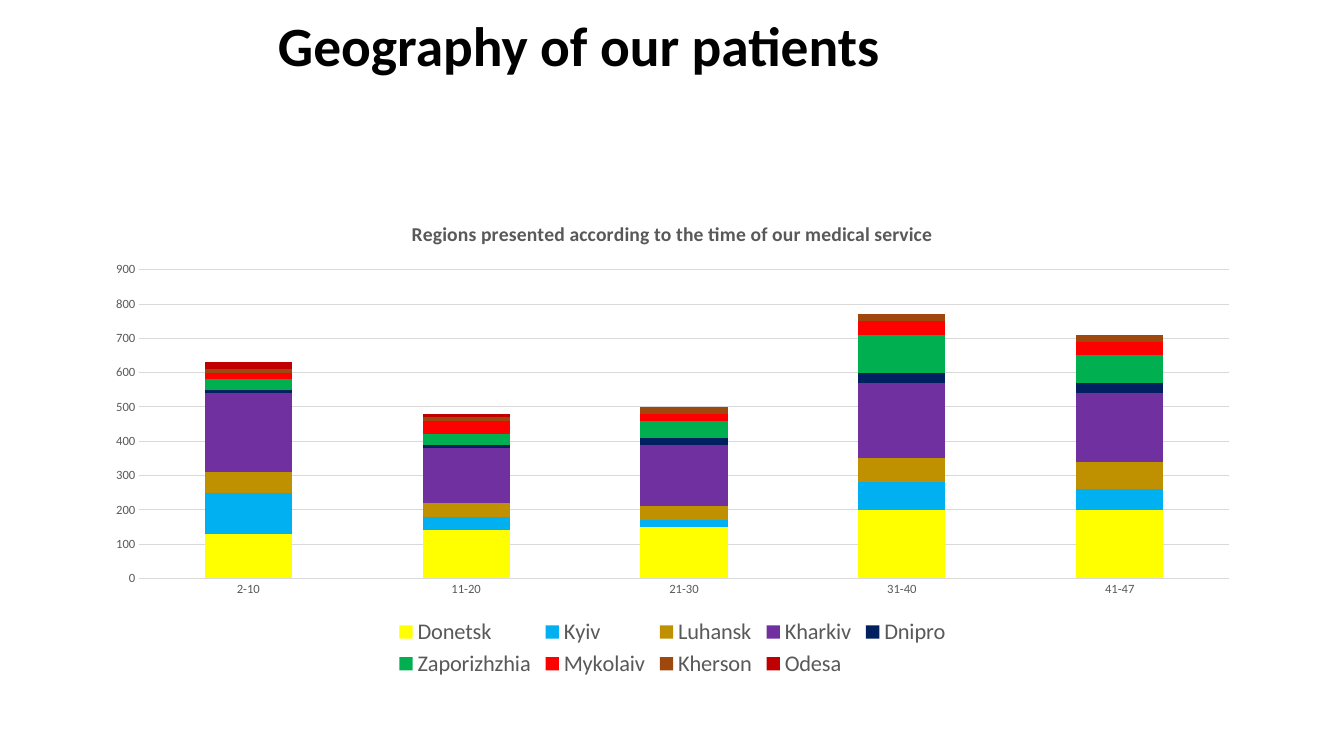
from pptx import Presentation
from pptx.chart.data import CategoryChartData
from pptx.dml.color import RGBColor
from pptx.enum.chart import XL_CHART_TYPE, XL_LEGEND_POSITION, XL_TICK_MARK
from pptx.enum.text import MSO_ANCHOR, MSO_AUTO_SIZE, PP_ALIGN
from pptx.util import Emu, Pt

PX = 914400 / 100.8
FACE = "Calibri"
BLACK = RGBColor(0x00, 0x00, 0x00)
GRAY = RGBColor(0x59, 0x59, 0x59)
RULE = RGBColor(0xD9, 0xD9, 0xD9)

SPANS = ["2-10", "11-20", "21-30", "31-40", "41-47"]
# Region, bar colour, patients per span
REGIONS = [
    ("Donetsk", RGBColor(0xFF, 0xFF, 0x00), (130, 140, 150, 200, 200)),
    ("Kyiv", RGBColor(0x00, 0xB0, 0xF0), (120, 40, 20, 80, 60)),
    ("Luhansk", RGBColor(0xBF, 0x90, 0x00), (60, 40, 40, 70, 80)),
    ("Kharkiv", RGBColor(0x70, 0x30, 0xA0), (230, 160, 180, 220, 200)),
    ("Dnipro", RGBColor(0x00, 0x20, 0x60), (10, 10, 20, 30, 30)),
    ("Zaporizhzhia", RGBColor(0x00, 0xB0, 0x50), (30, 30, 50, 110, 80)),
    ("Mykolaiv", RGBColor(0xFF, 0x00, 0x00), (20, 40, 20, 40, 40)),
    ("Kherson", RGBColor(0x9E, 0x48, 0x0E), (10, 10, 20, 20, 20)),
    ("Odesa", RGBColor(0xC0, 0x00, 0x00), (20, 10, 0, 0, 0)),
]


def px(count):
    return Emu(round(count * PX))


def assign(target, **values):
    for name, value in values.items():
        setattr(target, name, value)


def style(font, size, color, bold=False):
    assign(font, name=FACE, size=Pt(size), bold=bold)
    font.color.rgb = color


def draw_rule(line):
    line.color.rgb = RULE
    line.width = Pt(0.75)


def set_title(slide, text):
    title = slide.shapes.title
    assign(title, left=px(93), top=px(19), width=px(1159), height=px(146))
    frame = title.text_frame
    assign(frame, text=text, word_wrap=True, auto_size=MSO_AUTO_SIZE.NONE,
           vertical_anchor=MSO_ANCHOR.TOP, margin_left=px(185), margin_top=0)
    para = frame.paragraphs[0]
    assign(para, alignment=PP_ALIGN.LEFT, line_spacing=0.9)
    style(para.runs[0].font, 39.6, BLACK, True)


def set_axes(chart):
    for axis in (chart.category_axis, chart.value_axis):
        assign(axis, major_tick_mark=XL_TICK_MARK.NONE,
               minor_tick_mark=XL_TICK_MARK.NONE)
        style(axis.tick_labels.font, 9, GRAY)
    draw_rule(chart.category_axis.format.line)
    scale = chart.value_axis
    assign(scale, minimum_scale=0, maximum_scale=900, major_unit=100)
    scale.format.line.fill.background()
    draw_rule(scale.major_gridlines.format.line)


def add_bars(slide, heading):
    data = CategoryChartData()
    data.categories = SPANS
    for name, _, counts in REGIONS:
        data.add_series(name, counts)
    chart = slide.shapes.add_chart(
        XL_CHART_TYPE.COLUMN_STACKED,
        px(93), px(202), px(1159), px(480), data).chart
    style(chart.font, 10, BLACK)

    # Heading and legend
    chart.has_title = True
    frame = chart.chart_title.text_frame
    frame.text = heading
    style(frame.paragraphs[0].runs[0].font, 14, GRAY, True)
    chart.has_legend = True
    assign(chart.legend, position=XL_LEGEND_POSITION.BOTTOM,
           include_in_layout=False)
    style(chart.legend.font, 16, GRAY)

    # Stacked bars
    plot = chart.plots[0]
    assign(plot, gap_width=150, overlap=100, vary_by_categories=False)
    for series, (_, color, _) in zip(plot.series, REGIONS):
        series.format.fill.solid()
        series.format.fill.fore_color.rgb = color
    set_axes(chart)


def main():
    deck = Presentation()
    assign(deck, slide_width=px(1344), slide_height=px(756))
    slide = deck.slides.add_slide(deck.slide_layouts[5])
    set_title(slide, "Geography of our patients")
    add_bars(slide, "Regions presented according to the time of our "
                    "medical service")
    deck.save("out.pptx")


if __name__ == "__main__":
    main()
